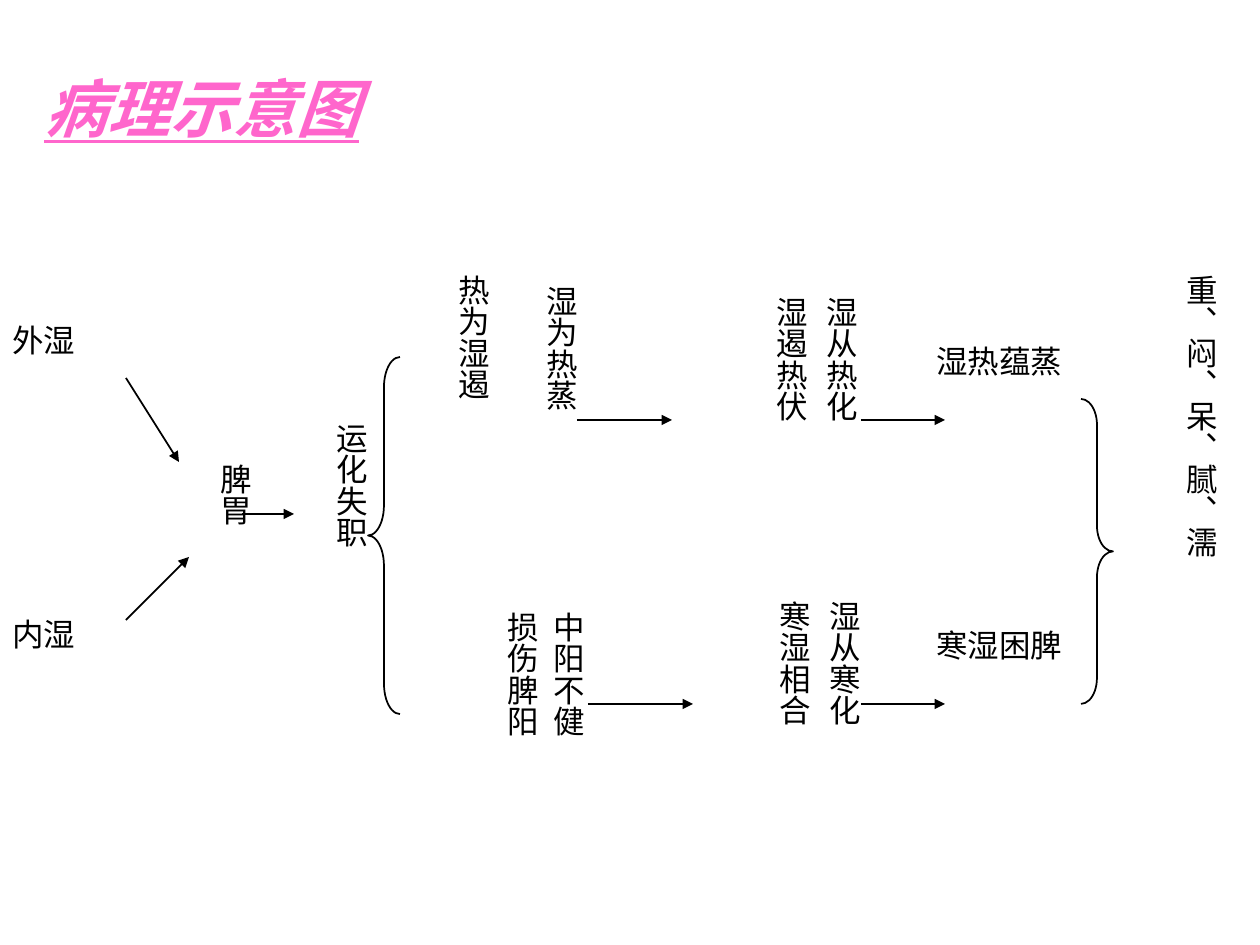
from lxml import etree
from pptx import Presentation
from pptx import util as u
from pptx.dml.color import RGBColor
from pptx.enum import shapes, text
from pptx.oxml.ns import qn

PX = 914400 // 126
COLORS = {"title": "FF66CC", "ink": "000000"}
FONT = "Calibri"

# Labels: left, top, width, height, paragraphs
HORIZONTAL = [
    (0, 315, 189, 79, ["外湿"]),
    (0, 609, 158, 79, ["内湿"]),
    (924, 336, 168, 147, ["湿热蕴蒸"]),
    (924, 620, 179, 147, ["寒湿困脾"]),
]
VERTICAL = [
    (168, 451, 92, 158, ["脾胃"]),
    (284, 410, 92, 315, ["运化失职"]),
    (305, 262, 193, 305, ["热为湿遏"]),
    (494, 273, 92, 305, ["湿为热蒸"]),
    (1134, 262, 92, 525, ["重、闷、呆、腻、濡"]),
]
# Two-column labels, with line spacing last
COLUMN_PAIRS = [
    (420, 599, 166, 284, ["中阳不健", "损伤脾阳"], 0.8),
    (682, 284, 180, 294, ["湿从热化", "湿遏热伏"], 0.9),
    (685, 588, 180, 315, ["湿从寒化", "寒湿相合"], 0.9),
]
# Arrows: start x, start y, end x, end y
ARROWS = [
    (126, 378, 179, 462),
    (126, 620, 189, 557),
    (242, 514, 294, 514),
    (577, 420, 672, 420),
    (588, 704, 693, 704),
    (861, 420, 945, 420),
    (861, 704, 945, 704),
]


def px(*values):
    return [u.Emu(v * PX) for v in values]


def color(name):
    return RGBColor.from_string(COLORS[name])


def add_label(slide, x, y, w, h, lines, spacing=None, vertical=False,
              size=18, ink="ink", title=False):
    sp = slide.shapes.add_textbox(*px(x, y, w, h))
    tf = sp.text_frame
    tf.text = "\n".join(lines)
    tf.word_wrap = True
    tf.auto_size = text.MSO_AUTO_SIZE.SHAPE_TO_FIT_TEXT
    if vertical:
        tf._txBody.bodyPr.set("vert", "eaVert")
    for p in tf.paragraphs:
        p.space_before = u.Pt(size / 2)
        if spacing:
            p.line_spacing = spacing
        for r in p.runs:
            r.font.name = FONT
            r.font.size = u.Pt(size)
            r.font.color.rgb = color(ink)
            if title:
                r.font.bold = r.font.italic = r.font.underline = True


def style_line(line):
    line.color.rgb = color("ink")
    line.width = u.Pt(1)


def add_arrow(slide, *ends):
    sp = slide.shapes.add_connector(shapes.MSO_CONNECTOR.STRAIGHT, *px(*ends))
    style_line(sp.line)
    etree.SubElement(sp.line._get_or_add_ln(), qn("a:tailEnd"), type="triangle")
    etree.SubElement(sp._element.spPr, qn("a:effectLst"))


def add_brace(slide, kind, x, y, w, h, curve):
    sp = slide.shapes.add_shape(kind, *px(x, y, w, h))
    sp.adjustments[0] = curve
    sp.shadow.inherit = False
    sp.fill.background()
    style_line(sp.line)


def main():
    prs = Presentation()
    prs.slide_width, prs.slide_height = px(1260, 945)
    slide = prs.slides.add_slide(prs.slide_layouts[6])

    # Title
    add_label(slide, 32, 63, 829, 88, ["病理示意图"], size=36, ink="title", title=True)

    # Labels
    for label in HORIZONTAL:
        add_label(slide, *label)
    for label in VERTICAL + COLUMN_PAIRS:
        add_label(slide, *label, vertical=True)

    # Arrows and braces
    for ends in ARROWS:
        add_arrow(slide, *ends)
    add_brace(slide, shapes.MSO_SHAPE.LEFT_BRACE, 368, 357, 32, 357, 0.94)
    add_brace(slide, shapes.MSO_SHAPE.RIGHT_BRACE, 1081, 399, 32, 305, 0.81)

    prs.save("out.pptx")


if __name__ == "__main__":
    main()
